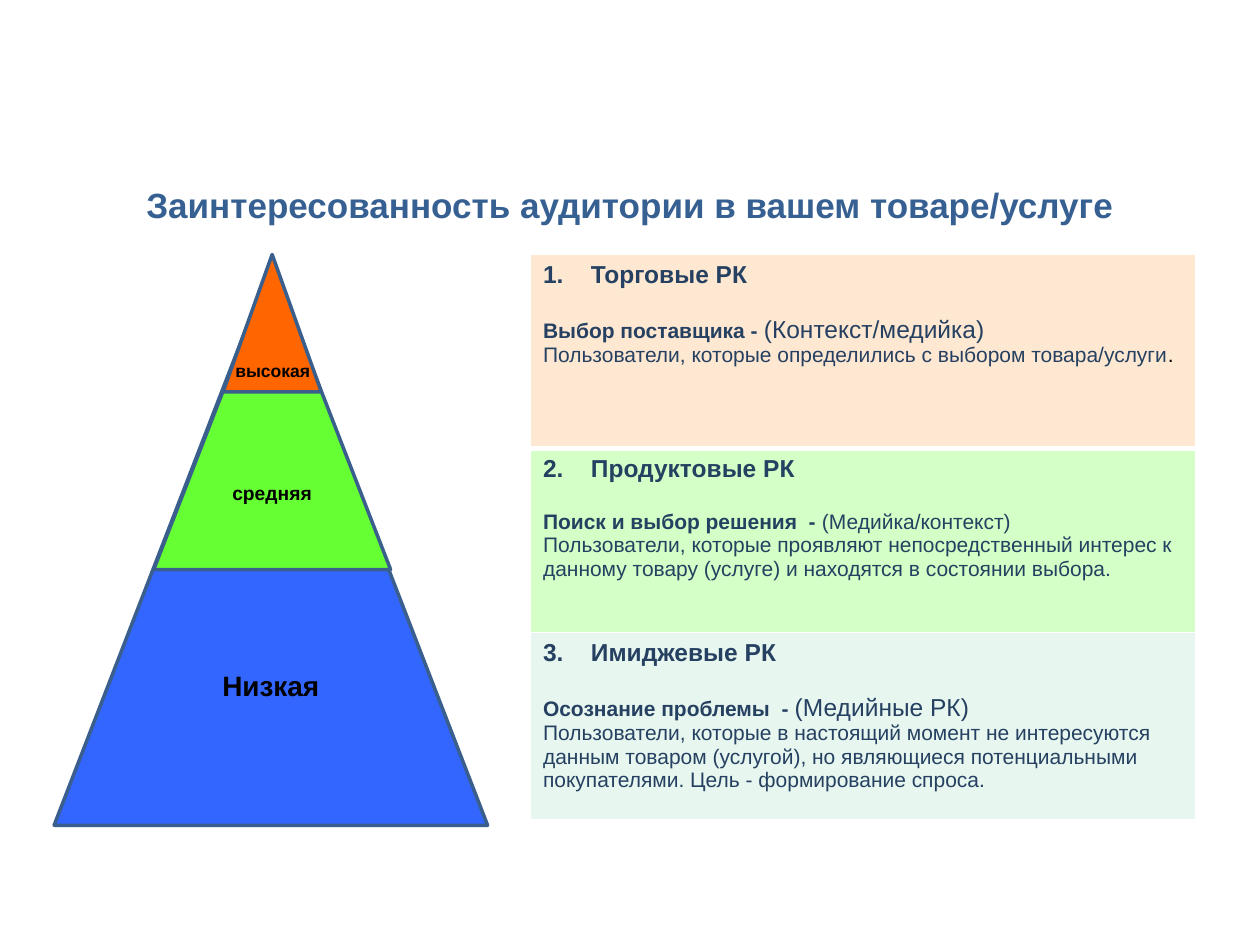
from pptx import Presentation
from pptx.dml.color import RGBColor
from pptx.enum.shapes import MSO_SHAPE
from pptx.enum.text import MSO_ANCHOR, PP_ALIGN
from pptx.oxml import parse_xml
from pptx.oxml.ns import nsdecls, qn
from pptx.util import Inches, Pt
from lxml import etree

TRIANGLE = MSO_SHAPE.ISOSCELES_TRIANGLE
MIDDLE, TOP = MSO_ANCHOR.MIDDLE, MSO_ANCHOR.TOP
CENTER, LEFT = PP_ALIGN.CENTER, PP_ALIGN.LEFT

TITLE_BLUE = RGBColor(0x37, 0x60, 0x92)
NAVY = RGBColor(0x25, 0x40, 0x61)
OUTLINE = RGBColor(0x3A, 0x5F, 0x8C)
BLACK = RGBColor(0, 0, 0)
BLUE = RGBColor(0x33, 0x66, 0xFF)
GREEN = RGBColor(0x66, 0xFF, 0x33)
ORANGE = RGBColor(0xFF, 0x66, 0x00)
PALE_ORANGE = RGBColor(0xFF, 0x99, 0x33)
MINT = RGBColor(0xE7, 0xF6, 0xEF)

# Fill, box and label of each level, from the base up
LEVELS = [
    (BLUE, (0.43, 2.1, 3.44, 4.45), "Низкая", 16),
    (GREEN, (1.22, 2.1, 1.88, 2.42), "средняя", 11),
    (ORANGE, (1.77, 2.02, 0.78, 1.09), None, None),
]

# Fill, opacity in percent, borders (top, bottom), heading, stage,
# channel, channel size, description lines
CAMPAIGNS = [
    (PALE_ORANGE, 22, (1, 3), "Торговые РК", "Выбор поставщика - ",
     "(Контекст/медийка)", 14,
     ["Пользователи, которые определились с выбором товара/услуги"]),
    (GREEN, 28, (3, 1), "Продуктовые РК", "Поиск и выбор решения  - ",
     "(Медийка/контекст)", 12,
     ["Пользователи, которые проявляют непосредственный интерес к "
      "данному товару (услуге) и находятся в состоянии выбора."]),
    (MINT, 100, (1, 1), "Имиджевые РК", "Осознание проблемы  - ",
     "(Медийные РК)", 14,
     ["Пользователи, которые в настоящий момент не интересуются",
      "данным товаром (услугой), но являющиеся потенциальными",
      "покупателями. Цель - формирование спроса."]),
]


def add_run(p, text, size, color, bold=False):
    r = p.add_run()
    r.text = text
    style = {"name": "Arial", "size": Pt(size), "bold": bold}
    for key, value in style.items():
        setattr(r.font, key, value)
    r.font.color.rgb = color


def add_title(slide, box):
    title = slide.shapes.title
    title.left, title.top, title.width, title.height = map(Inches, box)
    tf = title.text_frame
    tf.vertical_anchor = MIDDLE
    p = tf.paragraphs[0]
    p.alignment = CENTER
    add_run(p, "Заинтересованность аудитории в вашем товаре/услуге",
            20, TITLE_BLUE, True)


def number_paragraph(p, start):
    pPr = p._p.get_or_add_pPr()
    pPr.set("marL", str(Inches(0.38)))
    pPr.set("indent", str(-Inches(0.38)))
    etree.SubElement(pPr, qn("a:buFont"), typeface="+mj-lt")
    etree.SubElement(pPr, qn("a:buAutoNum"), type="arabicPeriod",
                     startAt=str(start))


def format_cell(cell, color, opacity, borders):
    cell.fill.solid()
    cell.fill.fore_color.rgb = color
    tcPr = cell._tc.get_or_add_tcPr()
    if opacity < 100:
        srgb = tcPr.find(".//" + qn("a:srgbClr"))
        etree.SubElement(srgb, qn("a:alpha"), val=str(opacity * 1000))
    top, bottom = borders
    sides = {"lnL": 1, "lnR": 1, "lnT": top, "lnB": bottom}
    for i, (tag, width) in enumerate(sides.items()):
        tcPr.insert(i, parse_xml(
            f'<a:{tag} {nsdecls("a")} w="{Pt(width)}"><a:solidFill>'
            f'<a:srgbClr val="FFFFFF"/></a:solidFill></a:{tag}>'))


def add_campaign_table(slide, box, heights):
    table = slide.shapes.add_table(len(CAMPAIGNS), 1,
                                   *map(Inches, box)).table
    for i, campaign in enumerate(CAMPAIGNS):
        fill, opacity, borders, heading, stage, channel, size, lines = campaign
        table.rows[i].height = Inches(heights[i])
        cell = table.cell(i, 0)
        cell.vertical_anchor = TOP
        format_cell(cell, fill, opacity, borders)
        tf = cell.text_frame

        # Numbered heading
        p = tf.paragraphs[0]
        number_paragraph(p, i + 1)
        add_run(p, heading, 14, NAVY, True)

        # Stage and channel
        p = tf.add_paragraph()
        p.space_before = Pt(16)
        add_run(p, stage, 12, NAVY, True)
        add_run(p, channel, size, NAVY)

        # Description
        for line in lines:
            p = tf.add_paragraph()
            add_run(p, line, 12, NAVY)
        if i == 0:
            add_run(p, ".", 12, BLACK)


def add_pyramid(slide, label_box):
    for fill, box, label, size in LEVELS:
        s = slide.shapes.add_shape(TRIANGLE, *map(Inches, box))
        s.shadow.inherit = False
        s.fill.solid()
        s.fill.fore_color.rgb = fill
        s.line.color.rgb = OUTLINE
        s.line.width = Pt(2)
        if label:
            tf = s.text_frame
            tf.vertical_anchor = MIDDLE
            p = tf.paragraphs[0]
            p.alignment = CENTER
            add_run(p, label, size, BLACK, True)

    # The top level is too narrow to hold its own label
    tf = slide.shapes.add_textbox(*map(Inches, label_box)).text_frame
    tf.word_wrap = True
    p = tf.paragraphs[0]
    p.alignment = LEFT
    add_run(p, "высокая", 10, BLACK, True)


def main():
    prs = Presentation()
    prs.slide_width, prs.slide_height = Inches(10), Inches(7.5)
    slide = prs.slides.add_slide(prs.slide_layouts[5])
    add_title(slide, (0.5, 1.39, 9, 0.47))
    add_campaign_table(slide, (4.21, 2.02, 5.28, 4.49), (1.54, 1.46, 1.49))
    add_pyramid(slide, (1.77, 2.81, 0.87, 0.27))
    prs.save("out.pptx")


if __name__ == "__main__":
    main()
